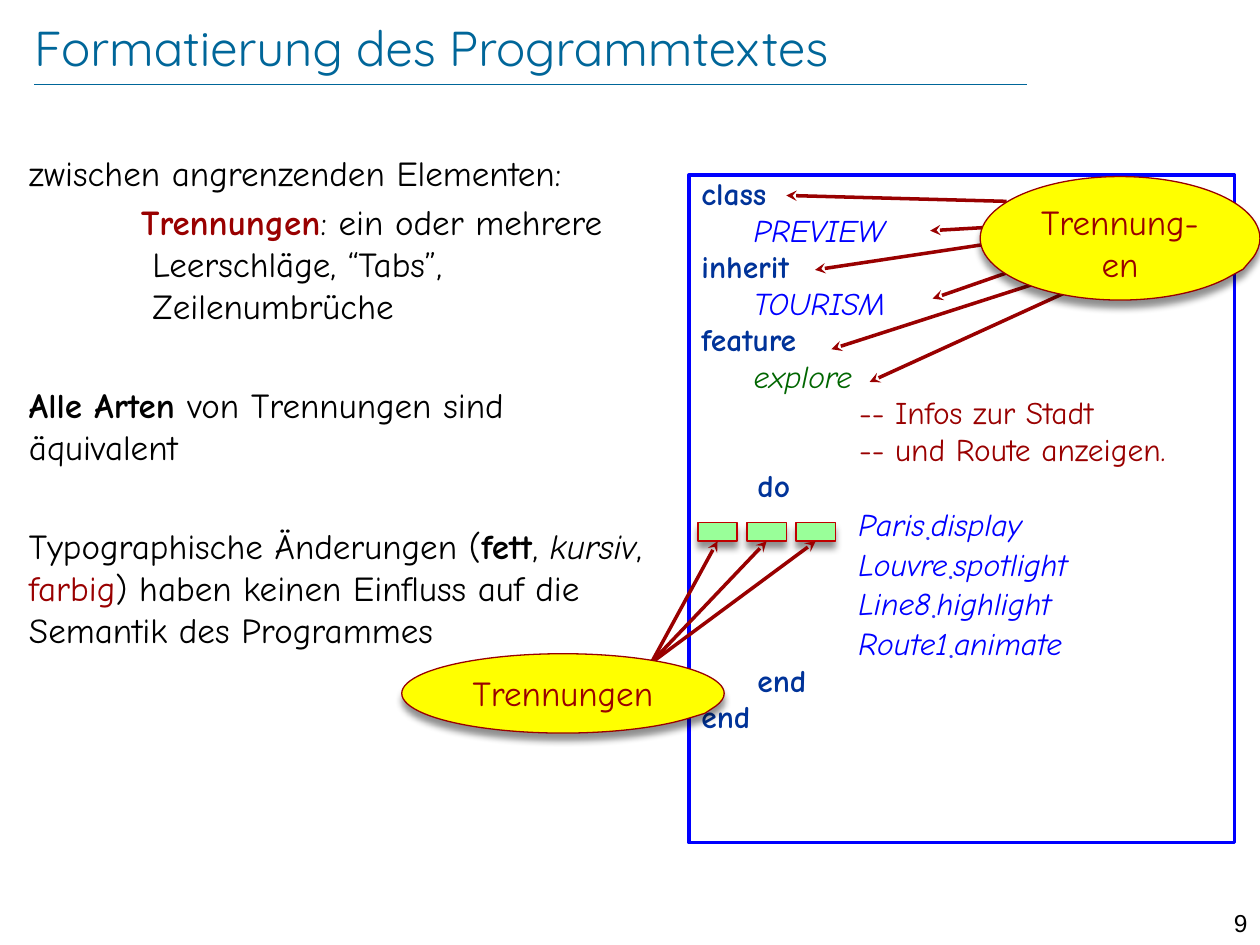
import pptx
import pptx.util
import pptx.dml.color
import pptx.enum.shapes
import pptx.enum.text
import pptx.oxml.ns
from lxml import etree

Cm, Pt = pptx.util.Cm, pptx.util.Pt
RGB = pptx.dml.color.RGBColor
SHAPE = pptx.enum.shapes.MSO_SHAPE
ALIGN = pptx.enum.text.PP_ALIGN
ANCHOR = pptx.enum.text.MSO_ANCHOR
qn = pptx.oxml.ns.qn

BLACK = RGB(0x00, 0x00, 0x00)
TEAL = RGB(0x00, 0x66, 0x99)
RED = RGB(0x99, 0x00, 0x00)
CRIMSON = RGB(0xC0, 0x00, 0x00)
NAVY = RGB(0x00, 0x33, 0x99)
BLUE = RGB(0x00, 0x00, 0xFF)
VIOLET = RGB(0x33, 0x33, 0xFF)
GREEN = RGB(0x00, 0x66, 0x00)
MINT = RGB(0x99, 0xFF, 0x99)
YELLOW = RGB(0xFF, 0xFF, 0x00)


class Deck:
    """Style and current slide. A run is (text, colour, marks): b, i, s = low dot."""
    font = "Comic Neue"

    def __init__(self):
        self.prs = pptx.Presentation()
        self.prs.slide_width, self.prs.slide_height = Cm(25.4), Cm(19.05)
        self.slide = self.prs.slides.add_slide(self.prs.slide_layouts[1])

    def add_runs(self, para, runs, size, font=None):
        for text, color, marks in runs:
            run = para.add_run()
            run.text = text
            run.font.name, run.font.size = font or self.font, Pt(size)
            run.font.color.rgb = color
            run.font.bold, run.font.italic = "b" in marks, "i" in marks
            if "s" in marks:
                run.font._element.set("baseline", "-20000")

    def lines(self, frame, rows):
        """Yield one paragraph for each row."""
        for num, row in enumerate(rows):
            yield num, frame.add_paragraph() if num else frame.paragraphs[0], row

    def place(self, shape, box):
        shape.left, shape.top, shape.width, shape.height = map(Cm, box)
        shape.text_frame.auto_size = pptx.enum.text.MSO_AUTO_SIZE.NONE
        shape.text_frame.word_wrap = True

    def title(self, text, box):
        shape = self.slide.shapes.title
        self.place(shape, box)
        frame = shape.text_frame
        frame.margin_left = frame.margin_right = frame.margin_top = frame.margin_bottom = 0
        frame.vertical_anchor = ANCHOR.MIDDLE
        frame.paragraphs[0].alignment = ALIGN.LEFT
        self.add_runs(frame.paragraphs[0], [(text, TEAL, "")], 28, "Quicksand")

    def body(self, rows, box):
        shape = self.slide.placeholders[1]
        self.place(shape, box)
        for num, para, (left, hang, gap, runs) in self.lines(shape.text_frame, rows):
            props = para._p.get_or_add_pPr()
            props.set("marL", str(Cm(left)))
            props.set("indent", str(Cm(hang)))
            etree.SubElement(props, qn("a:buNone"))
            para.space_before = Pt(gap)
            self.add_runs(para, runs, 20)

    def label(self, text, box):
        shape = self.slide.shapes.add_textbox(*map(Cm, box))
        shape.text_frame.word_wrap = True
        para = shape.text_frame.paragraphs[0]
        para.alignment = ALIGN.RIGHT
        self.add_runs(para, [(text, BLACK, "")], 14, "Arial")

    def shape(self, kind, box, fill, edge, width, shade=True):
        shape = self.slide.shapes.add_shape(kind, *map(Cm, box))
        if fill is None:
            shape.fill.background()
        else:
            shape.fill.solid()
            shape.fill.fore_color.rgb = fill
        shape.line.color.rgb, shape.line.width = edge, Pt(width)
        shape.shadow.inherit = False
        if shade:
            glow = etree.SubElement(
                shape._element.spPr.find(qn("a:effectLst")), qn("a:outerShdw"),
                blurRad=str(Pt(4)), dist=str(Pt(4)), dir="5400000", rotWithShape="0")
            tone = etree.SubElement(glow, qn("a:srgbClr"), val="000000")
            etree.SubElement(tone, qn("a:alpha"), val="43000")
        shape.text_frame.word_wrap = True
        shape.text_frame.vertical_anchor = ANCHOR.TOP
        return shape

    def code(self, rows, box):
        frame = self.shape(SHAPE.RECTANGLE, box, None, BLUE, 2, False).text_frame
        for num, para, runs in self.lines(frame, rows):
            para.alignment = ALIGN.LEFT
            para.line_spacing = 0.8
            para.space_before = Pt(3.6 if num else 0)
            self.add_runs(para, runs, 18)

    def bubble(self, text, box):
        shape = self.shape(SHAPE.OVAL_CALLOUT, box, YELLOW, RED, 0.75)
        shape.adjustments[0], shape.adjustments[1] = 0.44, 0.25
        para = shape.text_frame.paragraphs[0]
        para.alignment = ALIGN.CENTER
        self.add_runs(para, [(text, RED, "")], 20)

    def line(self, start, end, color=RED, width=2, head=True):
        line = self.slide.shapes.add_connector(
            pptx.enum.shapes.MSO_CONNECTOR.STRAIGHT, *map(Cm, start + end))
        line.line.color.rgb, line.line.width = color, Pt(width)
        if head:
            etree.SubElement(line.line._get_or_add_ln(), qn("a:tailEnd"), type="stealth")
        etree.SubElement(line._element.spPr, qn("a:effectLst"))
        return line


def call(thing, verb):
    return [(" " * 15 + thing, BLUE, "i"), ("•", VIOLET, "s"), (verb, BLUE, "i")]


def main():
    deck = Deck()

    # Title, rule and page number
    deck.title("Formatierung des Programmtextes", (0.69, 0.33, 22.07, 1.22))
    deck.line((0.69, 1.7), (20.7, 1.7), TEAL, 0.25, False)
    deck.label("9", (24, 18.19, 1.4, 0.61))

    # Explanations: left margin, first-line indent, space before, runs
    deck.body([
        (0, 0, 0, [("zwischen angrenzenden Elementen:", BLACK, "")]),
        (2.49, -0.23, 4, [
            ("Trennungen", RED, "b"),
            (": ein oder mehrere Leerschläge, “Tabs”, Zeilenumbrüche", BLACK, "")]),
        (0, 0, 32.5, [("Alle Arten ", BLACK, "b"),
                      ("von Trennungen sind äquivalent", BLACK, "")]),
        (0, 0, 32.5, [
            ("Typographische Änderungen (", BLACK, ""), ("fett", BLACK, "b"),
            (", ", BLACK, ""), ("kursiv", BLACK, "i"), (", ", BLACK, ""),
            ("farbig", RED, ""),
            (") haben keinen Einfluss auf die Semantik des Programmes", BLACK, "")]),
    ], (0.33, 2.92, 13.18, 14.61))

    # Program text
    deck.code([
        [("class", NAVY, "b")],
        [("     PREVIEW", BLUE, "i")],
        [("inherit", NAVY, "b")],
        [("     TOURISM", BLUE, "i")],
        [("feature", NAVY, "b")],
        [("     explore", GREEN, "i")],
        [("               -- Infos zur Stadt", RED, "")],
        [("               -- und Route anzeigen.", RED, "")],
        [("     do", NAVY, "b")],
        call("Paris", "display"),
        call("Louvre", "spotlight"),
        call("Line8", "highlight"),
        call("Route1", "animate"),
        [("     end", NAVY, "b")],
        [("end", NAVY, "b")],
    ], (13.89, 3.53, 11, 13.46))

    # Arrows to the line breaks
    for start, end in [
            ((20.29, 4.06), (15.85, 3.94)), ((20.14, 4.57), (18.75, 4.65)),
            ((20.37, 4.85), (16.43, 5.44)), ((21.36, 5.13), (18.8, 6.02)),
            ((22.23, 5.28), (16.76, 7.04)), ((23.16, 5.13), (17.53, 7.7))]:
        deck.line(start, end)

    # Tab boxes, each with its arrow
    for num, start in enumerate([(13.13, 13.36), (12.98, 13.51), (13.16, 13.34)]):
        left = 14.07 + 0.99 * num
        tab = deck.shape(SHAPE.RECTANGLE, (left, 10.53, 0.79, 0.38), MINT, CRIMSON, 0.75)
        deck.line(start, (left + 0.4, 10.91)).end_connect(tab, 2)

    # Callouts
    deck.bubble("Trennungen", (8.1, 13.18, 6.5, 1.6))
    deck.bubble("Trennung-en", (19.76, 3.56, 5.64, 2.49))

    deck.prs.save("out.pptx")


if __name__ == "__main__":
    main()
